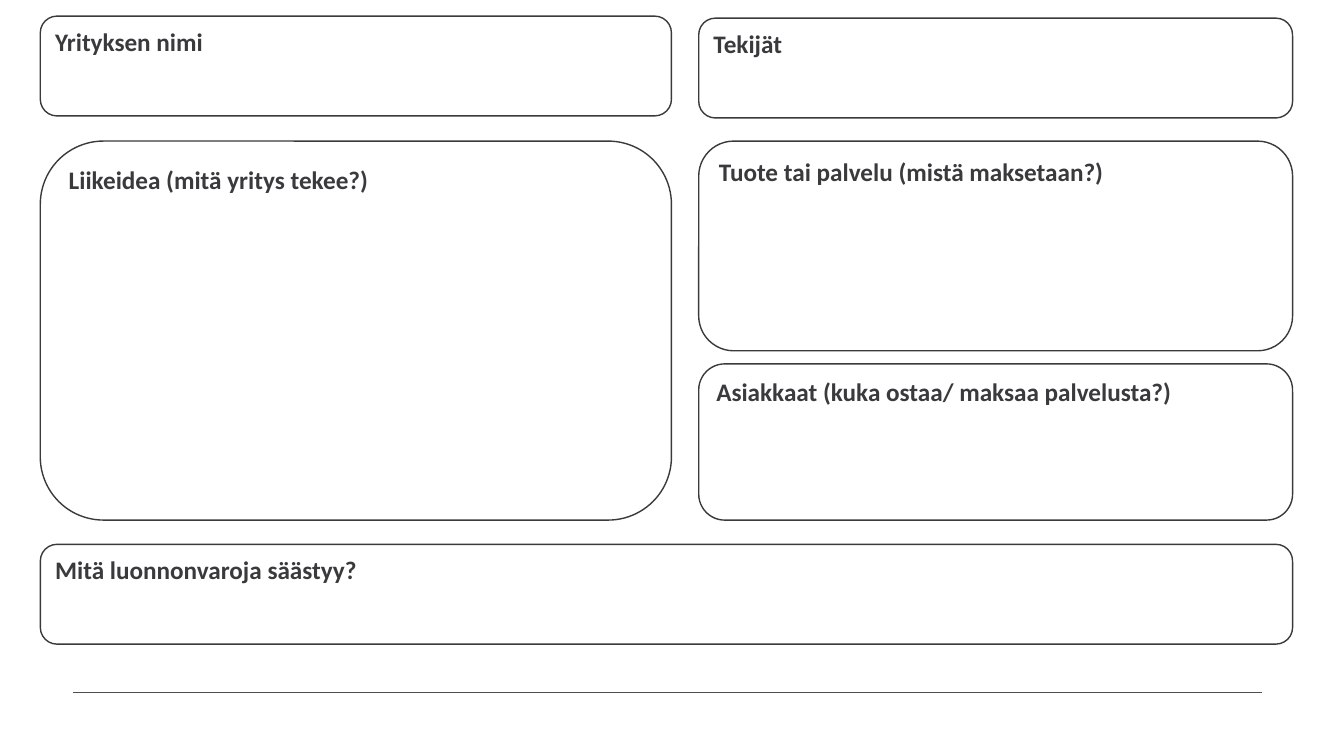
import pptx
import pptx.dml.color
import pptx.enum.shapes
import pptx.enum.text
import pptx.oxml
import pptx.oxml.ns
import pptx.util
from pptx.util import Inches

INK = pptx.dml.color.RGBColor(0x39, 0x3A, 0x3C)
RULE_GRAY = pptx.dml.color.RGBColor(0x4D, 0x4E, 0x50)
WHITE = pptx.dml.color.RGBColor(0xFF, 0xFF, 0xFF)

presentation = pptx.Presentation()
presentation.slide_width = Inches(13.33)
presentation.slide_height = Inches(7.5)
canvas = presentation.slides.add_slide(presentation.slide_layouts[6])

# Footer rule
footer_rule = canvas.shapes.add_connector(
    pptx.enum.shapes.MSO_CONNECTOR.STRAIGHT,
    Inches(0.72), Inches(6.87), Inches(12.52), Inches(6.87))
footer_rule.line.color.rgb = RULE_GRAY
footer_rule.line.width = pptx.util.Pt(1)
footer_rule._element.spPr.append(pptx.oxml.parse_xml(
    f'<a:effectLst {pptx.oxml.ns.nsdecls("a")}/>'))

# Business plan fields: heading, left, top, width, height
LEFT, LEFT_WIDTH = 0.4, 6.26
RIGHT, RIGHT_WIDTH = 6.93, 5.89
FULL_WIDTH = RIGHT + RIGHT_WIDTH - LEFT
LOW = 0.99
fields = [
    ("Yrityksen nimi", LEFT, 0.16, LEFT_WIDTH, LOW),
    ("Tekijät", RIGHT, 0.18, RIGHT_WIDTH, LOW),
    ("Liikeidea (mitä yritys tekee?)", LEFT, 1.4, LEFT_WIDTH, 3.76),
    ("Tuote tai palvelu (mistä maksetaan?)", RIGHT, 1.4, RIGHT_WIDTH, 2.08),
    ("Asiakkaat (kuka ostaa/ maksaa palvelusta?)", RIGHT, 3.61, RIGHT_WIDTH, 1.55),
    ("Mitä luonnonvaroja säästyy?", LEFT, 5.4, FULL_WIDTH, LOW),
]

for heading, left, top, width, height in fields:
    field = canvas.shapes.add_shape(
        pptx.enum.shapes.MSO_SHAPE.ROUNDED_RECTANGLE,
        Inches(left), Inches(top), Inches(width), Inches(height))
    field.shadow.inherit = False
    field.fill.solid()
    field.fill.fore_color.rgb = WHITE
    field.line.color.rgb = INK
    field.line.width = pptx.util.Pt(1)

    field.text_frame.word_wrap = True
    field.text_frame.vertical_anchor = pptx.enum.text.MSO_ANCHOR.TOP
    paragraph = field.text_frame.paragraphs[0]
    paragraph.text = heading
    paragraph.alignment = pptx.enum.text.PP_ALIGN.LEFT
    paragraph.font.name = "Calibri"
    paragraph.font.size = pptx.util.Pt(18)
    paragraph.font.bold = True
    paragraph.font.color.rgb = INK

presentation.save("out.pptx")
